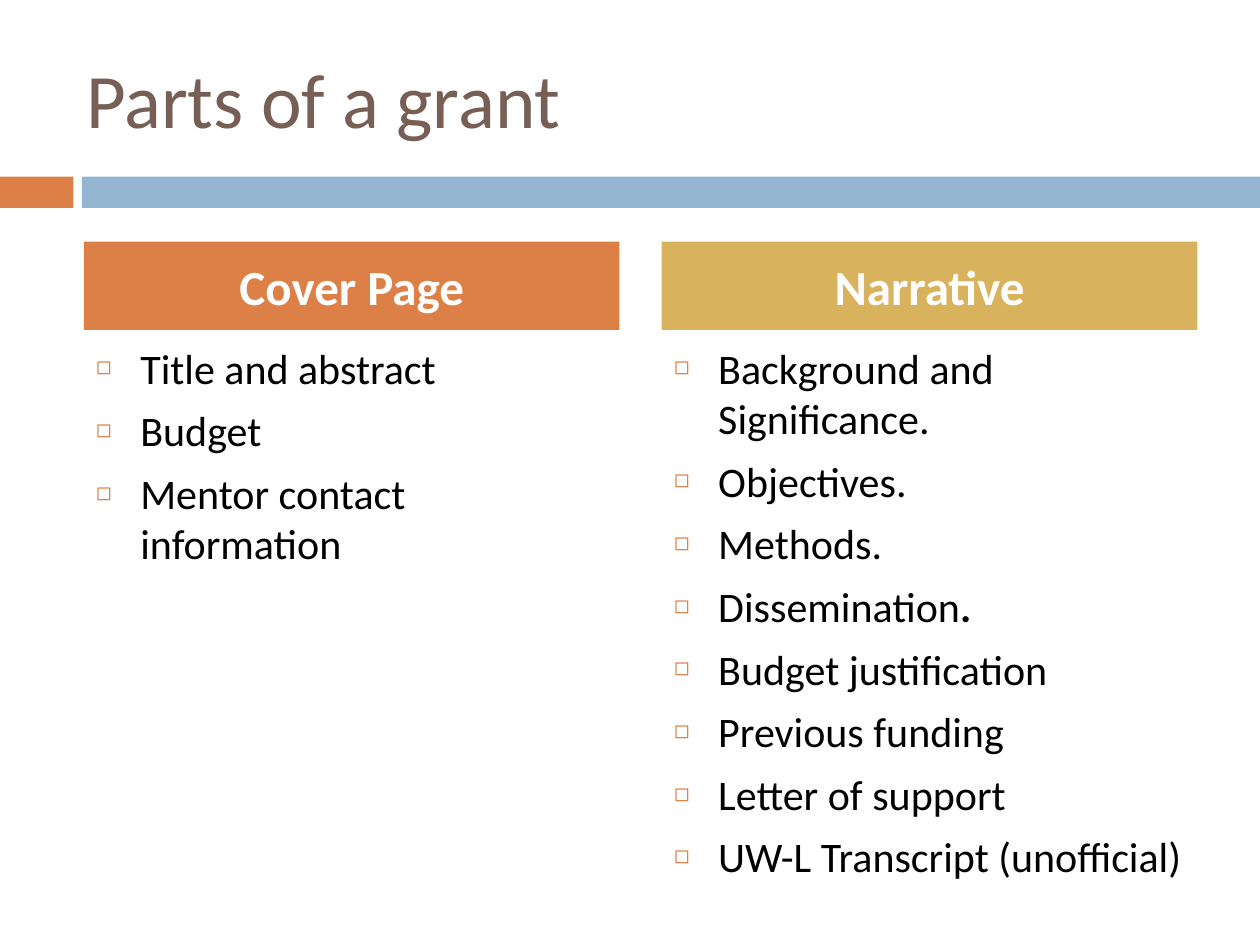
import pptx
import pptx.dml.color
import pptx.enum.shapes
import pptx.enum.text
import pptx.oxml.ns
import pptx.util
from lxml import etree

Cm = pptx.util.Cm
Pt = pptx.util.Pt
ALIGN = pptx.enum.text.PP_ALIGN
ANCHOR = pptx.enum.text.MSO_ANCHOR

FONT = "Calibri"
COLOURS = {
    "title": "775F55",
    "orange": "DD8047",
    "blue": "94B6D2",
    "gold": "D8B25C",
    "text": "000000",
    "white": "FFFFFF",
}
COLUMN_LEFT = 1.69
COLUMN_WIDTH = 10.8
COLUMN_STEP = 11.65
COLUMNS = [
    ("Cover Page", "orange",
     ["Title and abstract", "Budget", "Mentor contact information"]),
    ("Narrative", "gold",
     ["Background and Significance.", "Objectives.", "Methods.",
      "Dissemination.", "Budget justification", "Previous funding",
      "Letter of support", "UW-L Transcript (unofficial)"]),
]


def rgb(name):
    return pptx.dml.color.RGBColor.from_string(COLOURS[name])


def format_span(span, size, colour, bold=False):
    span.font.name = FONT
    span.font.size = Pt(size)
    span.font.bold = bold
    span.font.color.rgb = rgb(colour)


def add_bar(page, left, top, width, height, colour):
    bar = page.shapes.add_shape(
        pptx.enum.shapes.MSO_SHAPE.RECTANGLE,
        Cm(left), Cm(top), Cm(width), Cm(height))
    bar.shadow.inherit = False
    bar.fill.solid()
    bar.fill.fore_color.rgb = rgb(colour)
    bar.line.fill.background()
    return bar


def set_title(page, text):
    title = page.shapes.title
    title.left, title.top = Cm(1.48), Cm(0.76)
    title.width, title.height = Cm(22.65), Cm(2.41)
    frame = title.text_frame
    frame.text = text
    frame.auto_size = pptx.enum.text.MSO_AUTO_SIZE.NONE
    frame.vertical_anchor = ANCHOR.MIDDLE
    frame.paragraphs[0].alignment = ALIGN.LEFT
    format_span(frame.paragraphs[0].runs[0], 44, "title")


def add_heading(page, left, text, colour):
    heading = add_bar(page, left, 4.87, COLUMN_WIDTH, 1.78, colour)
    frame = heading.text_frame
    frame.text = text
    frame.vertical_anchor = ANCHOR.MIDDLE
    para = frame.paragraphs[0]
    para.alignment = ALIGN.CENTER
    para.space_before = Pt(7)
    format_span(para.runs[0], 28, "white", bold=True)


def add_bullet(para):
    """Give the paragraph a hanging indent and a small square bullet."""
    properties = para._p.get_or_add_pPr()
    properties.set("marL", str(Cm(0.89)))
    properties.set("indent", str(-Cm(0.89)))
    qn = pptx.oxml.ns.qn
    colour = etree.SubElement(properties, qn("a:buClr"))
    etree.SubElement(colour, qn("a:srgbClr"), val=COLOURS["orange"])
    etree.SubElement(properties, qn("a:buSzPct"), val="60000")
    etree.SubElement(properties, qn("a:buFont"), typeface=FONT)
    etree.SubElement(properties, qn("a:buChar"), char="◻")


def add_list(page, left, items):
    box = page.shapes.add_textbox(
        Cm(left), Cm(6.77), Cm(COLUMN_WIDTH), Cm(9.95))
    frame = box.text_frame
    frame.word_wrap = True
    frame.text = "\n".join(items)
    for para in frame.paragraphs:
        para.space_before = Pt(7)
        add_bullet(para)
        if para.text == "Dissemination.":
            para.runs[0].text = "Dissemination"
            para.add_run().text = "."
        for index, span in enumerate(para.runs):
            format_span(span, 24, "text", bold=index > 0)


def main():
    deck = pptx.Presentation()
    deck.slide_width, deck.slide_height = Cm(25.4), Cm(19.05)
    page = deck.slides.add_slide(deck.slide_layouts[5])
    add_bar(page, 0, 3.56, 1.48, 0.63, "orange")
    add_bar(page, 1.65, 3.56, 23.75, 0.63, "blue")
    set_title(page, "Parts of a grant")
    for index, (heading, colour, items) in enumerate(COLUMNS):
        left = COLUMN_LEFT + index * COLUMN_STEP
        add_list(page, left, items)
        add_heading(page, left, heading, colour)
    deck.save("out.pptx")


if __name__ == "__main__":
    main()
